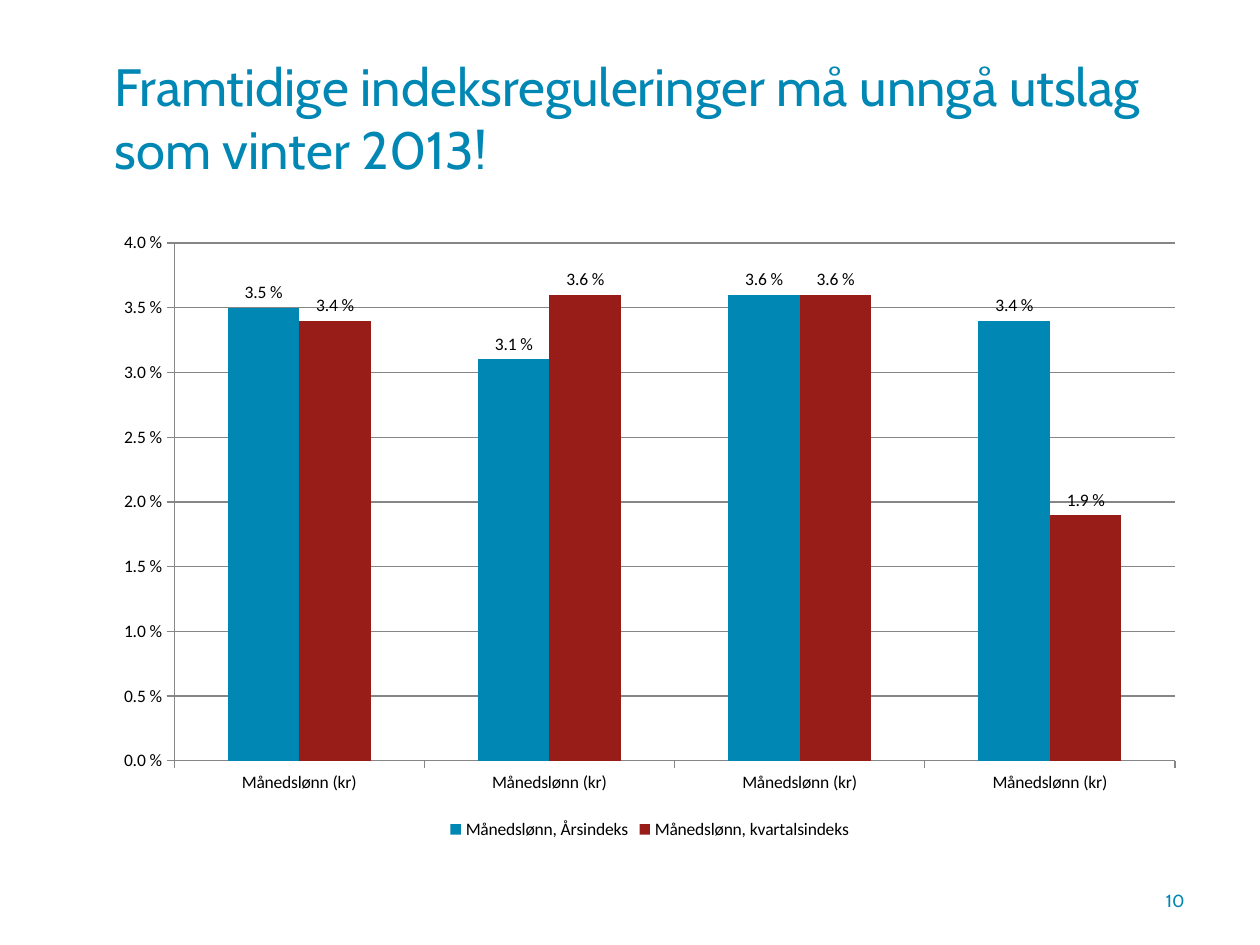
from dataclasses import dataclass

from pptx import Presentation
from pptx import util as u
from pptx.chart.data import CategoryChartData
from pptx.dml.color import RGBColor
from pptx.enum import chart as ch, text

BLUE = RGBColor(0x00, 0x87, 0xB3)
RED = RGBColor(0x98, 0x1D, 0x19)
GRAY = RGBColor(0x86, 0x86, 0x86)
BLACK = RGBColor(0x00, 0x00, 0x00)
PERCENT = r"0.0\ %"
LEFT, WIDTH = u.Cm(2.06), u.Cm(22.07)


@dataclass
class Label:
    text: str
    left: u.Length
    top: u.Length
    width: u.Length
    height: u.Length
    size: int
    align: text.PP_ALIGN


@dataclass
class Series:
    name: str
    values: tuple[float, ...]
    color: RGBColor


LABELS = [
    Label("Framtidige indeksreguleringer må unngå utslag som vinter 2013!",
          LEFT, u.Cm(0.76), WIDTH, u.Cm(3.18), 30, text.PP_ALIGN.LEFT),
    Label("10", u.Cm(22.43), u.Cm(17.65), u.Cm(1.7), u.Cm(1.02), 10,
          text.PP_ALIGN.RIGHT),
]
SERIES = [
    Series("Månedslønn, Årsindeks", (0.035, 0.031, 0.036, 0.034), BLUE),
    Series("Månedslønn, kvartalsindeks", (0.034, 0.036, 0.036, 0.019), RED),
]


def add_label(slide, label: Label) -> None:
    sp = slide.shapes.add_textbox(label.left, label.top, label.width, label.height)
    tf = sp.text_frame
    tf.word_wrap = True
    tf.vertical_anchor = text.MSO_ANCHOR.MIDDLE
    tf.text = label.text
    p = tf.paragraphs[0]
    p.alignment = label.align
    r = p.runs[0]
    r.font.name = "Cabin"
    r.font.size = u.Pt(label.size)
    r.font.color.rgb = BLUE


def style_line(line) -> None:
    line.color.rgb = GRAY
    line.width = u.Pt(0.75)


def add_wage_chart(slide, series: list[Series]) -> None:
    data = CategoryChartData(number_format=PERCENT)
    data.categories = ["Månedslønn (kr)"] * len(series[0].values)
    for s in series:
        data.add_series(s.name, s.values)
    chart = slide.shapes.add_chart(
        ch.XL_CHART_TYPE.COLUMN_CLUSTERED, LEFT, u.Cm(4.45), WIDTH, u.Cm(12.57), data
    ).chart
    chart.has_title = False
    chart.font.name = "Calibri"
    chart.font.size = u.Pt(10)
    chart.font.color.rgb = BLACK
    chart.has_legend = True
    chart.legend.position = ch.XL_LEGEND_POSITION.BOTTOM
    chart.legend.include_in_layout = False

    for axis in (chart.category_axis, chart.value_axis):
        axis.major_tick_mark = ch.XL_TICK_MARK.OUTSIDE
        style_line(axis.format.line)
    axis = chart.value_axis
    axis.minimum_scale, axis.maximum_scale, axis.major_unit = 0, 0.04, 0.005
    axis.has_major_gridlines = True
    style_line(axis.major_gridlines.format.line)
    axis.tick_labels.number_format = PERCENT
    axis.tick_labels.number_format_is_linked = False

    plot = chart.plots[0]
    plot.gap_width = 150
    plot.overlap = 0
    plot.vary_by_categories = False
    for s, bars in zip(series, plot.series):
        bars.format.fill.solid()
        bars.format.fill.fore_color.rgb = s.color
        labels = bars.data_labels
        labels.show_value = True
        labels.number_format = PERCENT
        labels.number_format_is_linked = False
        labels.position = ch.XL_LABEL_POSITION.OUTSIDE_END


def main() -> None:
    prs = Presentation()
    prs.slide_width, prs.slide_height = u.Cm(25.4), u.Cm(19.05)
    slide = prs.slides.add_slide(prs.slide_layouts[6])
    for label in LABELS:
        add_label(slide, label)
    add_wage_chart(slide, SERIES)
    prs.save("out.pptx")


if __name__ == "__main__":
    main()
